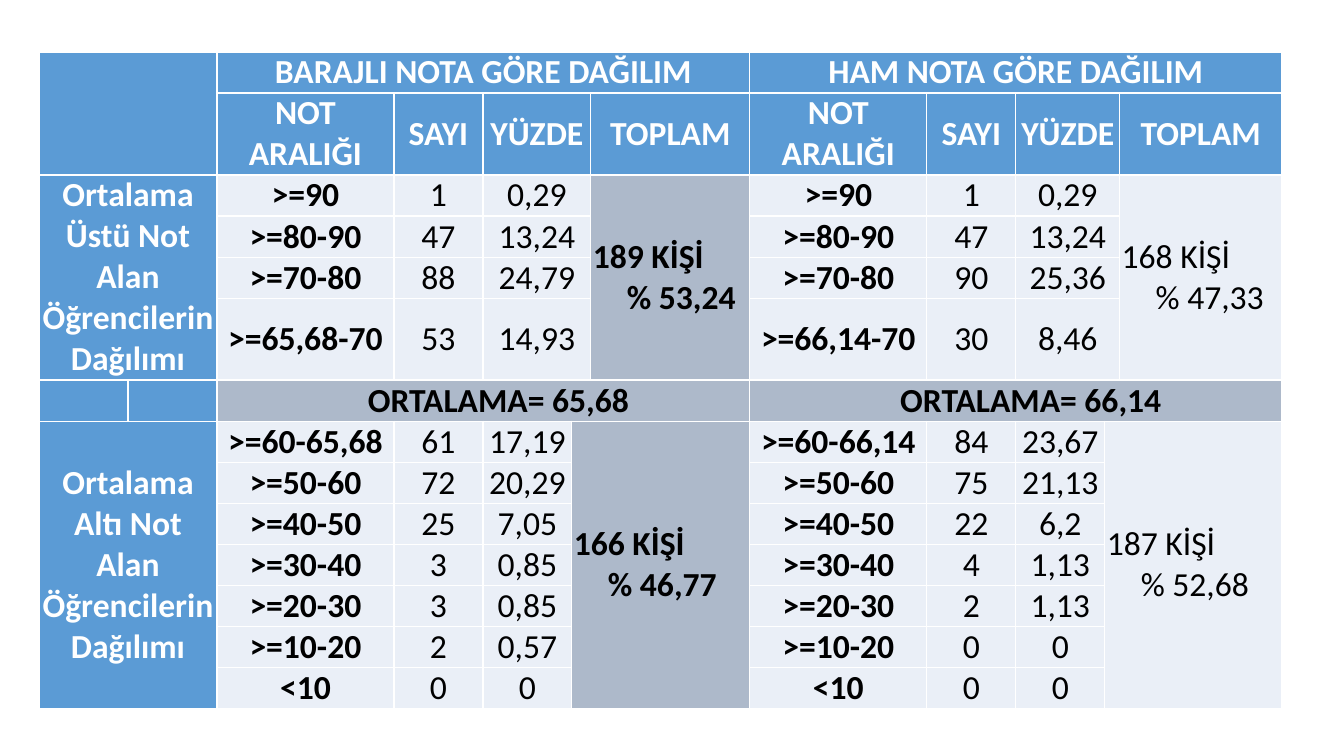
import dataclasses

import lxml.etree
import pptx
import pptx.dml.color
import pptx.enum.text
import pptx.oxml.ns
import pptx.util

EMU_PER_INCH = 914400
PX_PER_INCH = 100.8


@dataclasses.dataclass(frozen=True)
class Theme:
    font: str = "Calibri"
    size: int = 24
    border_width: int = 1
    header: str = "5B9BD5"
    body: str = "EAEFF7"
    accent: str = "ADB9CA"
    light: str = "FFFFFF"
    dark: str = "000000"


def px(length):
    return pptx.util.Emu(round(length * EMU_PER_INCH / PX_PER_INCH))


class GradeSlide:
    def __init__(self, deck, theme):
        self.theme = theme
        self.slide = deck.slides.add_slide(deck.slide_layouts[6])
        self.grid = None

    def table(self, left, top, height, widths, heights):
        frame = self.slide.shapes.add_table(
            len(heights), len(widths), px(left), px(top), px(sum(widths)), px(height))
        self.grid = frame.table
        for flag, value in {"first_row": False, "horz_banding": False}.items():
            setattr(self.grid, flag, value)
        for column, width in zip(self.grid.columns, widths):
            column.width = px(width)
        for row, row_height in zip(self.grid.rows, heights):
            row.height = px(row_height)
        frame.height = px(height)
        for cell in self.grid.iter_cells():
            self.borders(cell)
            self.paint(cell, self.theme.header)

    def borders(self, cell):
        properties = cell._tc.get_or_add_tcPr()
        for side in ("a:lnL", "a:lnR", "a:lnT", "a:lnB"):
            line = lxml.etree.SubElement(
                properties, pptx.oxml.ns.qn(side),
                w=str(pptx.util.Pt(self.theme.border_width)))
            solid = lxml.etree.SubElement(line, pptx.oxml.ns.qn("a:solidFill"))
            lxml.etree.SubElement(solid, pptx.oxml.ns.qn("a:srgbClr"), val=self.theme.light)

    def paint(self, cell, fill):
        layout = {
            "margin_left": 0, "margin_right": 0, "margin_top": 0, "margin_bottom": 0,
            "vertical_anchor": pptx.enum.text.MSO_ANCHOR.MIDDLE,
        }
        for name, value in layout.items():
            setattr(cell, name, value)
        cell.fill.solid()
        cell.fill.fore_color.rgb = pptx.dml.color.RGBColor.from_string(fill)

    def cell(self, row, column, text, fill, ink, bold=True, rows=1, columns=1,
             align=pptx.enum.text.PP_ALIGN.CENTER, margin=0, hanging=0):
        cell = self.grid.cell(row, column)
        if rows * columns > 1:
            cell.merge(self.grid.cell(row + rows - 1, column + columns - 1))
        self.paint(cell, fill)
        paragraph = cell.text_frame.paragraphs[0]
        paragraph.text = text
        paragraph.alignment = align
        for name, value in {"marL": margin, "indent": -hanging}.items():
            paragraph._p.get_or_add_pPr().set(name, str(px(value)))
        style = {"name": self.theme.font, "size": pptx.util.Pt(self.theme.size), "bold": bold}
        for run in paragraph.runs:
            for name, value in style.items():
                setattr(run.font, name, value)
            run.font.color.rgb = pptx.dml.color.RGBColor.from_string(ink)

    def header(self, row, column, text, **span):
        self.cell(row, column, text, self.theme.header, self.theme.light, **span)

    def total(self, row, column, text, fill, bold, **span):
        self.cell(row, column, text, fill, self.theme.dark, bold,
                  align=pptx.enum.text.PP_ALIGN.LEFT, margin=36, hanging=34, **span)

    def grades(self, first_row, first_column, grades, percent_columns):
        for row, (grade_range, count, percent) in enumerate(grades, first_row):
            for offset, text in enumerate((grade_range, count, percent)):
                self.cell(row, first_column + offset, text, self.theme.body, self.theme.dark,
                          bold=offset == 0, columns=percent_columns if offset == 2 else 1)

    def distribution(self, column, title, above, above_total, average,
                     below, below_total, total_fill, total_bold):
        self.header(0, column, title, columns=5)
        for offset, text, columns in ((0, "NOT ARALIĞI", 1), (1, "SAYI", 1),
                                      (2, "YÜZDE", 2), (4, "TOPLAM", 1)):
            self.header(1, column + offset, text, columns=columns)
        self.grades(2, column, above, percent_columns=2)
        self.total(2, column + 4, above_total, total_fill, total_bold, rows=4)
        self.cell(6, column, average, self.theme.accent, self.theme.dark, columns=5, margin=30)
        self.grades(7, column, below, percent_columns=1)
        self.total(7, column + 3, below_total, total_fill, total_bold, rows=7, columns=2)


def main():
    theme = Theme()
    deck = pptx.Presentation()
    deck.slide_width, deck.slide_height = px(1344), px(756)
    slide = GradeSlide(deck, theme)
    slide.table(
        39, 52, 645,
        widths=[89, 89, 177, 89, 89, 19, 159, 177, 89, 89, 15, 162],
        heights=[39, 80, 39, 39, 39, 67] + [39] * 8)

    slide.header(0, 0, "", rows=2, columns=2)
    slide.header(2, 0, "Ortalama Üstü Not Alan Öğrencilerin Dağılımı", rows=4, columns=2)
    slide.header(7, 0, "Ortalama Altı Not Alan Öğrencilerin Dağılımı", rows=7, columns=2)

    slide.distribution(
        2, "BARAJLI NOTA GÖRE DAĞILIM",
        above=[(">=90", "1", "0,29"), (">=80-90", "47", "13,24"),
               (">=70-80", "88", "24,79"), (">=65,68-70", "53", "14,93")],
        above_total="189 KİŞİ\v% 53,24",
        average="ORTALAMA= 65,68",
        below=[(">=60-65,68", "61", "17,19"), (">=50-60", "72", "20,29"),
               (">=40-50", "25", "7,05"), (">=30-40", "3", "0,85"),
               (">=20-30", "3", "0,85"), (">=10-20", "2", "0,57"), ("<10", "0", "0")],
        below_total="166 KİŞİ\v% 46,77",
        total_fill=theme.accent, total_bold=True)
    slide.distribution(
        7, "HAM NOTA GÖRE DAĞILIM",
        above=[(">=90", "1", "0,29"), (">=80-90", "47", "13,24"),
               (">=70-80", "90", "25,36"), (">=66,14-70", "30", "8,46")],
        above_total="168 KİŞİ\v% 47,33",
        average="ORTALAMA= 66,14",
        below=[(">=60-66,14", "84", "23,67"), (">=50-60", "75", "21,13"),
               (">=40-50", "22", "6,2"), (">=30-40", "4", "1,13"),
               (">=20-30", "2", "1,13"), (">=10-20", "0", "0"), ("<10", "0", "0")],
        below_total="187 KİŞİ\v% 52,68",
        total_fill=theme.body, total_bold=False)
    deck.save("out.pptx")


if __name__ == "__main__":
    main()
